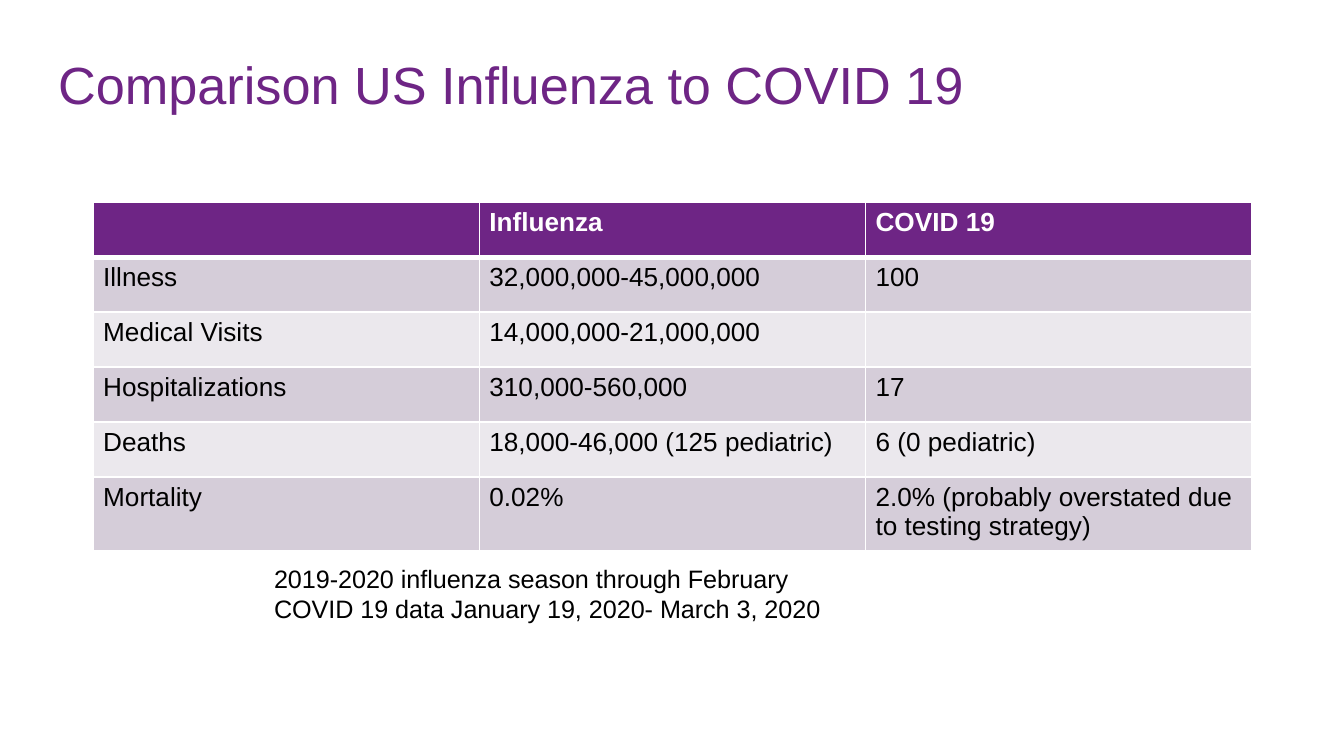
from lxml import etree
from pptx import Presentation
from pptx import util as u
from pptx.dml.color import RGBColor
from pptx.enum import text
from pptx.oxml import ns

PURPLE = RGBColor(0x6E, 0x25, 0x85)
BAND_DARK = RGBColor(0xD5, 0xCD, 0xD9)
BAND_LIGHT = RGBColor(0xEB, 0xE8, 0xED)
WHITE = RGBColor(0xFF, 0xFF, 0xFF)
BLACK = RGBColor(0, 0, 0)

ROWS = [
    ["", "Influenza", "COVID 19"],
    ["Illness", "32,000,000-45,000,000", "100"],
    ["Medical Visits", "14,000,000-21,000,000", ""],
    ["Hospitalizations", "310,000-560,000", "17"],
    ["Deaths", "18,000-46,000 (125 pediatric)", "6 (0 pediatric)"],
    ["Mortality", "0.02%", "2.0% (probably overstated due to testing strategy)"],
]
NOTES = ["2019-2020 influenza season through February",
         "COVID 19 data January 19, 2020- March 3, 2020"]


def write(tf, lines, size, color=BLACK, bold=False, spacing=None):
    """Fill a text frame with one formatted paragraph per line."""
    tf.word_wrap = True
    for i, line in enumerate(lines):
        p = tf.paragraphs[0] if i == 0 else tf.add_paragraph()
        p.line_spacing = spacing
        p.font.size = u.Pt(size)
        if line:
            r = p.add_run()
            r.text = line
            r.font.name = "Arial"
            r.font.size = u.Pt(size)
            r.font.bold = bold
            r.font.color.rgb = color


def set_borders(cell, **widths):
    """Draw white cell borders with the given point widths."""
    tc_pr = cell._tc.get_or_add_tcPr()
    for side in "LRTB":
        ln = etree.SubElement(tc_pr, ns.qn(f"a:ln{side}"), w=str(u.Pt(widths.get(side, 1))))
        fill = etree.SubElement(ln, ns.qn("a:solidFill"))
        etree.SubElement(fill, ns.qn("a:srgbClr"), val=str(WHITE))


def add_title(s, x, y, w, h):
    """Place the slide title in the given box."""
    tf = s.shapes.add_textbox(x, y, w, h).text_frame
    tf.margin_left = tf.margin_right = tf.margin_top = tf.margin_bottom = 0
    tf.vertical_anchor = text.MSO_ANCHOR.MIDDLE
    write(tf, ["Comparison US Influenza to COVID 19"], 28, PURPLE, spacing=0.9)


def add_comparison(s, x, y, w, h):
    """Place the banded comparison table in the given box."""
    table = s.shapes.add_table(len(ROWS), len(ROWS[0]), x, y, w, h).table
    for col in table.columns:
        col.width = w // len(ROWS[0])
    row_h = u.Cm(1.04)
    for i, values in enumerate(ROWS):
        last = i == len(ROWS) - 1
        table.rows[i].height = h - row_h * i if last else row_h
        header = i == 0
        for j, value in enumerate(values):
            cell = table.cell(i, j)
            set_borders(cell, B=3 if header else 1, T=3 if i == 1 else 1)
            cell.fill.solid()
            cell.fill.fore_color.rgb = PURPLE if header else BAND_DARK if i % 2 else BAND_LIGHT
            cell.margin_left = cell.margin_right = u.Cm(0.19)
            cell.margin_top = cell.margin_bottom = u.Cm(0.1)
            write(cell.text_frame, [value], 14, WHITE if header else BLACK, bold=header)


def add_notes(s, x, y, w, h):
    """Place the data period lines in the given box."""
    tf = s.shapes.add_textbox(x, y, w, h).text_frame
    tf.auto_size = text.MSO_AUTO_SIZE.SHAPE_TO_FIT_TEXT
    write(tf, NOTES, 13.5)


def main():
    """Build the slide and save it."""
    prs = Presentation()
    prs.slide_width, prs.slide_height = u.Cm(25.4), u.Cm(14.29)
    s = prs.slides.add_slide(prs.slide_layouts[6])
    add_title(s, u.Cm(1.1), u.Cm(0.96), u.Cm(22.86), u.Cm(1.4))
    add_comparison(s, u.Cm(1.76), u.Cm(3.82), u.Cm(21.9), u.Cm(6.55))
    add_notes(s, u.Cm(4.93), u.Cm(10.52), u.Cm(13.74), u.Cm(1.42))
    prs.save("out.pptx")


if __name__ == "__main__":
    main()
